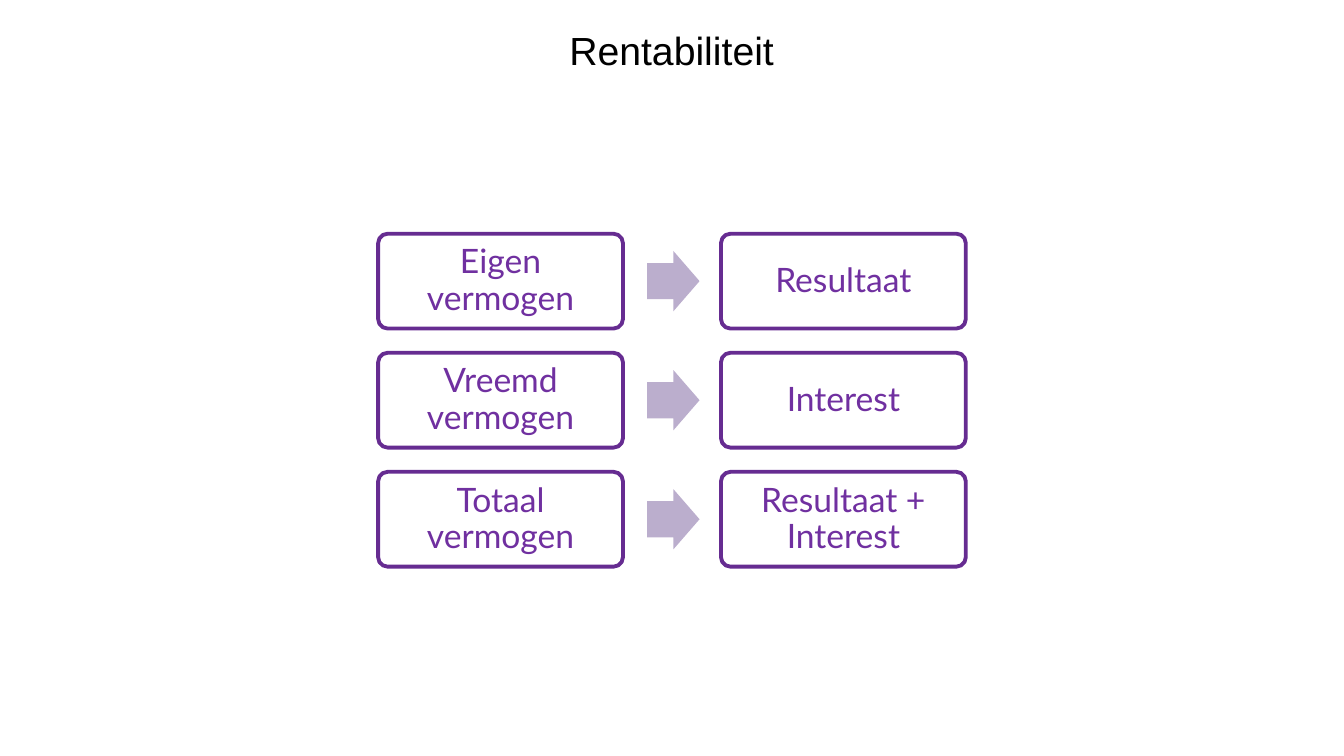
from pptx import Presentation
from pptx import util as u
from pptx.dml.color import RGBColor
from pptx.enum import shapes, text

BLACK = RGBColor(0x00, 0x00, 0x00)
WHITE = RGBColor(0xFF, 0xFF, 0xFF)
EDGE = RGBColor(0x66, 0x2C, 0x91)
INK = RGBColor(0x70, 0x30, 0xA0)
LILAC = RGBColor(0xBB, 0xAE, 0xCD)

ROWS = [
    ("Eigen vermogen", "Resultaat"),
    ("Vreemd vermogen", "Interest"),
    ("Totaal vermogen", "Resultaat + Interest"),
]
BOX_W, BOX_H = u.Cm(6.17), u.Cm(2.39)
ARROW_W, ARROW_H = u.Cm(1.32), u.Cm(1.52)
ARROW_X = u.Cm(6.78)  # from the left edge of a row
PAD = u.Cm(0.25)


def apply(item, values):
    for name, value in values.items():
        setattr(item, name, value)


def write(frame, words, face, size, color):
    para = frame.paragraphs[0]
    para.alignment = text.PP_ALIGN.CENTER
    run = para.add_run()
    run.text = words
    apply(run.font, {"name": face, "size": u.Pt(size)})
    run.font.color.rgb = color
    return para


def draw(parent, kind, box, fill, ratios):
    shape = parent.shapes.add_shape(kind, *box)
    shape.shadow.inherit = False
    shape.fill.solid()
    shape.fill.fore_color.rgb = fill
    for i, ratio in enumerate(ratios):
        shape.adjustments[i] = ratio
    return shape


# Title across the top
def add_title(slide, box):
    frame = slide.shapes.add_textbox(*box).text_frame
    frame.word_wrap = True
    write(frame, "Rentabiliteit", "Arial", 28, BLACK)


# Rounded box with its label
def add_card(group, left, top, label):
    card = draw(group, shapes.MSO_SHAPE.ROUNDED_RECTANGLE,
                (left, top, BOX_W, BOX_H), WHITE, [0.1])
    card.line.color.rgb = EDGE
    card.line.width = u.Pt(2.75)
    frame = card.text_frame
    apply(frame, {
        "word_wrap": True,
        "vertical_anchor": text.MSO_ANCHOR.MIDDLE,
        "margin_left": PAD, "margin_right": PAD,
        "margin_top": PAD, "margin_bottom": PAD,
    })
    write(frame, label, "Lato", 24, INK).line_spacing = 0.9


# One row: capital, arrow, return
def add_row(slide, left, top, width, labels):
    group = slide.shapes.add_group_shape()
    add_card(group, left, top, labels[0])
    arrow = draw(group, shapes.MSO_SHAPE.RIGHT_ARROW,
                 (left + ARROW_X, top + (BOX_H - ARROW_H) // 2,
                  ARROW_W, ARROW_H), LILAC, [0.6, 0.5])
    arrow.line.fill.background()
    add_card(group, left + width - BOX_W, top, labels[1])


# Rows spread evenly over the box
def add_rows(slide, left, top, width, height):
    step = (height - BOX_H) // (len(ROWS) - 1)
    for i, labels in enumerate(ROWS):
        add_row(slide, left, top + i * step, width, labels)


def main():
    deck = Presentation()
    apply(deck, {"slide_width": u.Cm(33.87), "slide_height": u.Cm(19.05)})
    slide = deck.slides.add_slide(deck.slide_layouts[6])
    add_title(slide, (u.Cm(5.94), u.Cm(0.53), u.Cm(21.97), u.Cm(1.45)))
    add_rows(slide, u.Cm(9.53), u.Cm(5.89), u.Cm(14.81), u.Cm(8.39))
    deck.save("out.pptx")


if __name__ == "__main__":
    main()
